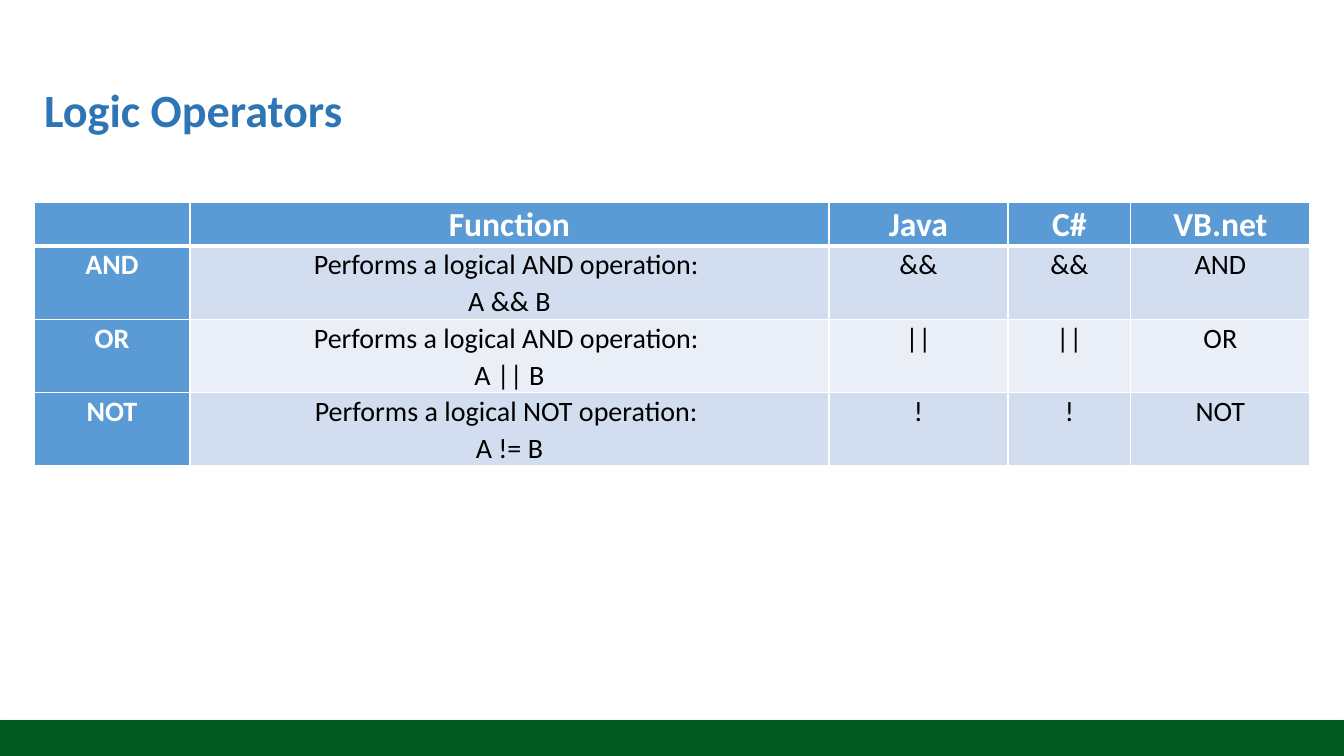
from lxml.etree import SubElement
from pptx import Presentation
from pptx.dml.color import RGBColor
from pptx.enum.shapes import MSO_SHAPE
from pptx.enum.text import MSO_ANCHOR, MSO_AUTO_SIZE, PP_ALIGN
from pptx.oxml import parse_xml
from pptx.oxml.ns import nsdecls, qn
from pptx.util import Emu, Pt

GREEN = RGBColor(0x01, 0x5A, 0x22)
TITLE_BLUE = RGBColor(0x2E, 0x75, 0xB6)
HEADER_BLUE = RGBColor(0x5B, 0x9B, 0xD5)
BAND_DARK = RGBColor(0xD2, 0xDE, 0xEF)
BAND_LIGHT = RGBColor(0xEA, 0xEF, 0xF7)
WHITE = RGBColor(0xFF, 0xFF, 0xFF)
BLACK = RGBColor(0x00, 0x00, 0x00)
FONT = "Calibri"


def px(n):
    return Emu(round(n * 914400 / 100.8))


def add_border(cell, side, width):
    ln = SubElement(cell._tc.get_or_add_tcPr(), qn(f"a:{side}"), w=str(Pt(width)))
    SubElement(SubElement(ln, qn("a:solidFill")), qn("a:srgbClr"), val=str(WHITE))


prs = Presentation()
prs.slide_width, prs.slide_height = px(1344), px(756)
s = prs.slides.add_slide(prs.slide_layouts[5])

footer = s.shapes.add_shape(MSO_SHAPE.RECTANGLE, 0, px(720), px(1344), px(36))
footer.fill.solid()
footer.fill.fore_color.rgb = GREEN
footer.line.fill.background()
footer.shadow.inherit = False
footer._element.spPr.find(qn("a:effectLst")).append(parse_xml(
    f'<a:outerShdw {nsdecls("a")} blurRad="{Pt(3.5)}" dist="{Pt(2.2)}" dir="5400000" rotWithShape="0">'
    '<a:srgbClr val="000000"><a:alpha val="32000"/></a:srgbClr></a:outerShdw>'))

title = s.shapes.title
title.left, title.top, title.width, title.height = px(34), px(40), px(1278), px(146)
tf = title.text_frame
tf.text = "Logic Operators"
tf.auto_size = MSO_AUTO_SIZE.NONE
tf.vertical_anchor = MSO_ANCHOR.MIDDLE
p = tf.paragraphs[0]
p.alignment = PP_ALIGN.LEFT
p.line_spacing = 0.9
font = p.runs[0].font
font.name, font.size, font.bold = FONT, Pt(33), True
font.color.rgb = TITLE_BLUE

rows = [
    ["", "Function", "Java", "C#", "VB.net"],
    ["AND", "Performs a logical AND operation: \nA && B", "&&", "&&", "AND"],
    ["OR", "Performs a logical AND operation: \nA || B", "||", "||", "OR"],
    ["NOT", "Performs a logical NOT operation: \nA != B", "!", "!", "NOT"],
]
col_widths = [156, 639, 179, 123, 179]
row_heights = [40, 72, 72, 72]
table = s.shapes.add_table(len(rows), len(col_widths), px(34), px(202),
                           px(sum(col_widths)), px(sum(row_heights))).table
for col, width in zip(table.columns, col_widths):
    col.width = px(width)
for row, height in zip(table.rows, row_heights):
    row.height = px(height)

for i, texts in enumerate(rows):
    for j, text in enumerate(texts):
        cell = table.cell(i, j)
        heading = i == 0 or j == 0
        for side in ("lnL", "lnR", "lnT", "lnB"):
            thick = (i, side) in ((0, "lnB"), (1, "lnT"))
            add_border(cell, side, 3 if thick else 1)
        cell.fill.solid()
        cell.fill.fore_color.rgb = HEADER_BLUE if heading else BAND_DARK if i % 2 else BAND_LIGHT
        cell.margin_left = cell.margin_right = px(11)
        cell.margin_top = cell.margin_bottom = 0
        cell.text_frame.text = text
        for p in cell.text_frame.paragraphs:
            p.alignment = PP_ALIGN.CENTER
            p.line_spacing = 1.07
            for r in p.runs:
                r.font.name, r.font.size = FONT, Pt(20 if i else 24)
                r.font.bold = heading
                r.font.color.rgb = WHITE if heading else BLACK

prs.save("out.pptx")
